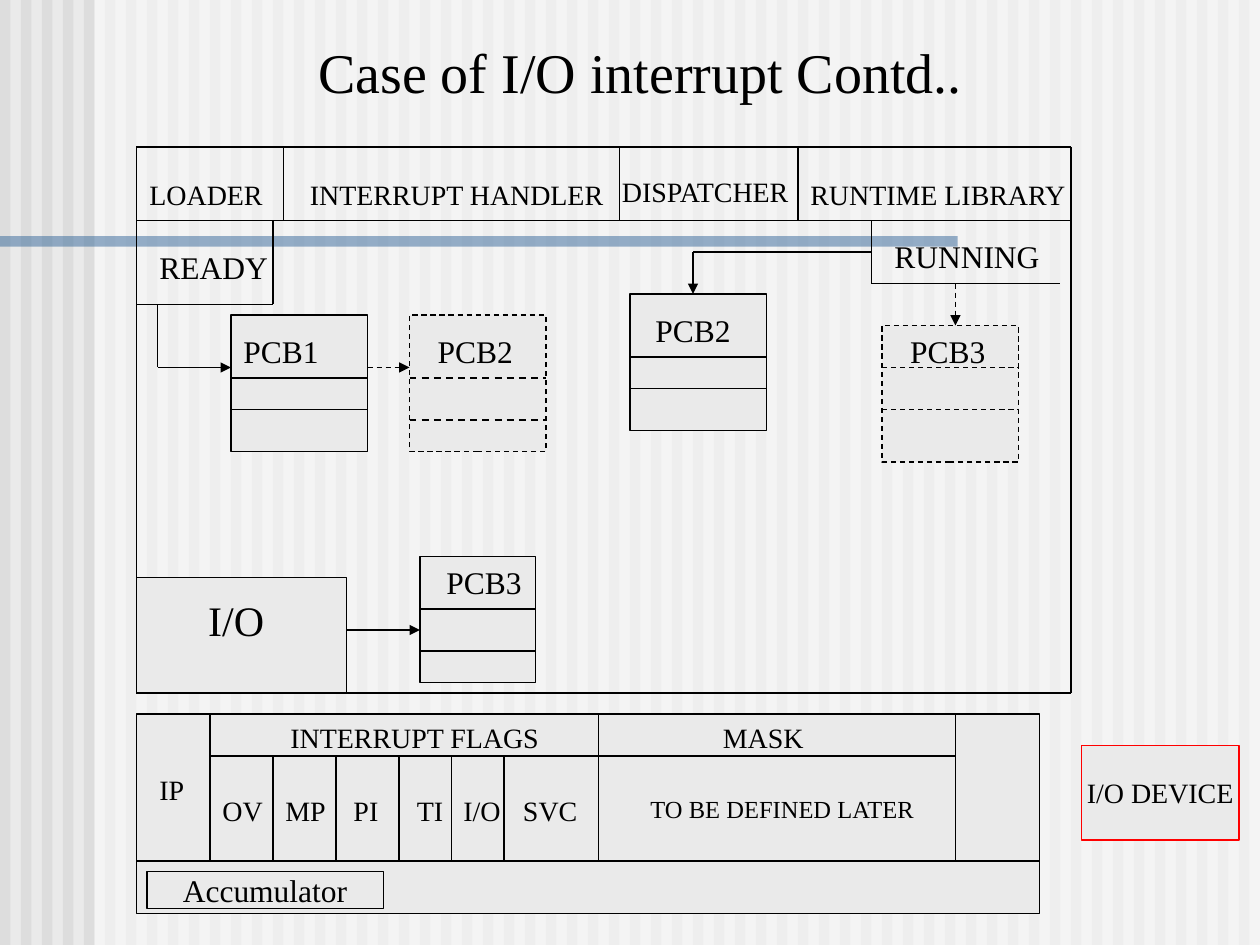
from dataclasses import dataclass
from itertools import pairwise

from pptx import Presentation
from pptx import util as u
from pptx.dml.color import RGBColor
from pptx.enum import dml, shapes, text
from pptx.oxml.ns import qn
from pptx.oxml.xmlchemy import OxmlElement

COLS, ROWS = 120, 90
LEFT, CENTER = text.PP_ALIGN.LEFT, text.PP_ALIGN.CENTER


@dataclass(frozen=True)
class Theme:
    font: str = "Times New Roman"
    ink: str = "000000"
    panel: str = "EAEAEA"
    stripe: str = "DDDDDD"
    veil: str = "FFFFFF"
    bar: str = "336699"
    alert: str = "FF0000"
    title: int = 32
    large: int = 24
    body: int = 18
    small: int = 16
    tiny: int = 14
    thin: float = 0.75
    thick: float = 1
    lead: float = 0.1  # space before a paragraph, as a share of its type size


class Diagram:
    """Places elements on one slide; lengths are grid columns and rows."""

    def __init__(self, prs, theme):
        self.theme = theme
        self.cell_w = prs.slide_width / COLS
        self.cell_h = prs.slide_height / ROWS
        self.s = prs.slides.add_slide(prs.slide_layouts[5])
        fill = self.s.background.fill
        fill.solid()
        fill.fore_color.rgb = RGBColor.from_string(theme.panel)

    def x(self, col):
        return u.Emu(round(col * self.cell_w))

    def y(self, row):
        return u.Emu(round(row * self.cell_h))

    def area(self, col, row, cols, rows):
        return self.x(col), self.y(row), self.x(cols), self.y(rows)

    def stroke(self, line, color, width, dash):
        line.color.rgb = RGBColor.from_string(color)
        line.width = u.Pt(width)
        if dash:
            line.dash_style = dml.MSO_LINE.DASH

    def add_text(self, p, words, size, align=CENTER):
        p.alignment = align
        r = p.add_run()
        r.text = words
        r.font.size = u.Pt(size)
        r.font.name = self.theme.font
        r.font.color.rgb = RGBColor.from_string(self.theme.ink)

    def title(self, words, col, row, cols, rows):
        sp = self.s.shapes.title
        sp.left, sp.top, sp.width, sp.height = self.area(col, row, cols, rows)
        sp.element.getparent().append(sp.element)  # in front of the backdrop
        tf = sp.text_frame
        tf.auto_size = text.MSO_AUTO_SIZE.NONE
        tf.vertical_anchor = text.MSO_ANCHOR.TOP
        p = tf.paragraphs[0]
        p.space_before = u.Pt(self.theme.title * self.theme.lead)
        self.add_text(p, words, self.theme.title)

    def band(self, col, row, cols, rows, color, alpha=None):
        """Borderless rectangle; alpha is its opacity in percent."""
        sp = self.s.shapes.add_shape(
            shapes.MSO_SHAPE.RECTANGLE, *self.area(col, row, cols, rows))
        sp.shadow.inherit = False
        sp.fill.solid()
        sp.fill.fore_color.rgb = RGBColor.from_string(color)
        sp.line.fill.background()
        if alpha:
            tag = OxmlElement("a:alpha")
            tag.set("val", str(alpha * 1000))
            sp.element.spPr.find(".//" + qn("a:srgbClr")).append(tag)
        return sp

    def box(self, col, row, cols, rows, words="", size=0,
            color=None, width=None, dash=False):
        t = self.theme
        sp = self.band(col, row, cols, rows, t.panel)
        self.stroke(sp.line, color or t.ink, width or t.thin, dash)
        if words:
            tf = sp.text_frame
            tf.word_wrap = False
            tf.vertical_anchor = text.MSO_ANCHOR.MIDDLE
            self.add_text(tf.paragraphs[0], words, size)

    def label(self, words, col, row, cols, size, align=CENTER, tail=0):
        """Text box; tail is the type size of a closing space, if there is one."""
        rows = max(size, tail) / 5 + 1.2
        tf = self.s.shapes.add_textbox(*self.area(col, row, cols, rows)).text_frame
        tf.word_wrap = True
        p = tf.paragraphs[0]
        p.space_before = u.Pt(size * self.theme.lead)
        self.add_text(p, words, size, align)
        if tail:
            self.add_text(p, " ", tail, align)

    def route(self, *points, arrow=False, width=None, dash=False):
        """Straight lines from point to point, with an arrowhead at the end."""
        for start, end in pairwise(points):
            c = self.s.shapes.add_connector(
                shapes.MSO_CONNECTOR.STRAIGHT, self.x(start[0]), self.y(start[1]),
                self.x(end[0]), self.y(end[1]))
            self.stroke(c.line, self.theme.ink, width or self.theme.thin, dash)
            c.element.spPr.append(OxmlElement("a:effectLst"))
            if arrow and end == points[-1]:
                head = OxmlElement("a:tailEnd")
                head.set("type", "triangle")
                c.element.spPr.find(qn("a:ln")).append(head)

    def pcb(self, name, col, row, rules, cols=13, rows=13, inset=(0, 1, 12),
            align=CENTER, outline=None, rule=None, dash=False):
        """Control block; rules are row offsets, inset places the name."""
        self.box(col, row, cols, rows, width=outline, dash=dash)
        for offset in rules:
            self.route((col, row + offset), (col + cols, row + offset),
                       width=rule, dash=dash)
        dx, dy, name_cols = inset
        self.label(name, col + dx, row + dy, name_cols, self.theme.body, align)


def draw_backdrop(d):
    t = d.theme
    for col in range(0, COLS, 2):
        d.band(col, 0, 1, ROWS, t.stripe)
    d.band(9, 0, COLS - 9, ROWS, t.veil, 50)
    d.band(0, 22.5, 91.2, 1, t.bar, 50)


def draw_memory(d):
    t = d.theme
    d.route((13, 14), (102, 14), (102, 66), (13, 66), (13, 14))
    d.route((13, 21), (102, 21))
    for col in (27, 59, 76):
        d.route((col, 14), (col, 21))
    d.route((13, 29), (26, 29), (26, 21))
    d.route((83, 21), (83, 27), (101, 27))

    d.label("LOADER", 12, 16, 16, t.small, tail=t.body)
    d.label("INTERRUPT HANDLER", 26, 15, 36, t.small, tail=t.large)
    d.label("DISPATCHER", 57, 16, 21, t.small, tail=t.small)
    d.label("RUNTIME LIBRARY", 76, 15, 28, t.small, LEFT, t.large)
    d.label("READY", 14, 22, 16, t.body, LEFT, t.large)
    d.label("RUNNING", 84, 21, 17, t.body, LEFT, t.large)


def draw_queues(d):
    t = d.theme
    d.pcb("PCB1", 22, 30, (6, 9), align=LEFT, outline=t.thick, rule=t.thick)
    d.pcb("PCB2", 39, 30, (6, 10), inset=(1.5, 1, 11), align=LEFT,
          rule=t.thick, dash=True)
    d.pcb("PCB2", 60, 28, (6, 9), outline=t.thick, rule=t.thick)
    d.pcb("PCB3", 84, 31, (4, 8), inset=(1.5, 0, 11), align=LEFT, dash=True)
    d.pcb("PCB3", 40, 53, (5, 9), 11, 12, inset=(1, 0, 10.2),
          outline=t.thick, rule=t.thick)
    d.box(13, 55, 20, 11)
    d.label("I/O", 15, 56, 15, t.large)

    d.route((15, 29), (15, 35), (22, 35), arrow=True, width=t.thick)
    d.route((35, 35), (39, 35), arrow=True, dash=True)
    d.route((83, 24), (66, 24), (66, 28), arrow=True)
    d.route((91, 27), (91, 31), arrow=True, dash=True)
    d.route((33, 60), (40, 60), arrow=True)


def draw_registers(d):
    t = d.theme
    d.box(13, 68, 86, 19)
    d.route((13, 82), (99, 82))
    d.route((20, 72), (91, 72))
    for col in (20, 57, 91):
        d.route((col, 68), (col, 82))
    for col in (26, 32, 38, 43, 48):
        d.route((col, 72), (col, 82))
    d.box(14, 83, 22.5, 3.5, "Accumulator", t.body)

    d.label("IP", 14, 73, 6, t.small, LEFT)
    d.label("INTERRUPT FLAGS", 20, 68, 39, t.small)
    d.label("MASK", 67.67, 68, 23, t.small, LEFT)
    d.label("TO BE DEFINED LATER", 55, 75, 39, t.tiny)
    flags = (("OV", 20, 9.7, LEFT), ("MP", 26, 9.7, LEFT), ("PI", 30, 9.7, CENTER),
             ("TI", 38, 5.9, CENTER), ("I/O", 42, 7.8, CENTER),
             ("SVC", 47, 10.8, CENTER))
    for flag, col, cols, align in flags:
        d.label(flag, col, 75, cols, t.small, align)
    d.box(103, 71, 15, 9, "I/O DEVICE", t.small, color=t.alert)


def main():
    prs = Presentation()
    prs.slide_width, prs.slide_height = u.Inches(10), u.Inches(7.5)
    d = Diagram(prs, Theme())
    draw_backdrop(d)
    d.title("Case of I/O interrupt Contd..", 24, 3, 74, 11)
    draw_memory(d)
    draw_queues(d)
    draw_registers(d)
    prs.save("out.pptx")


if __name__ == "__main__":
    main()
